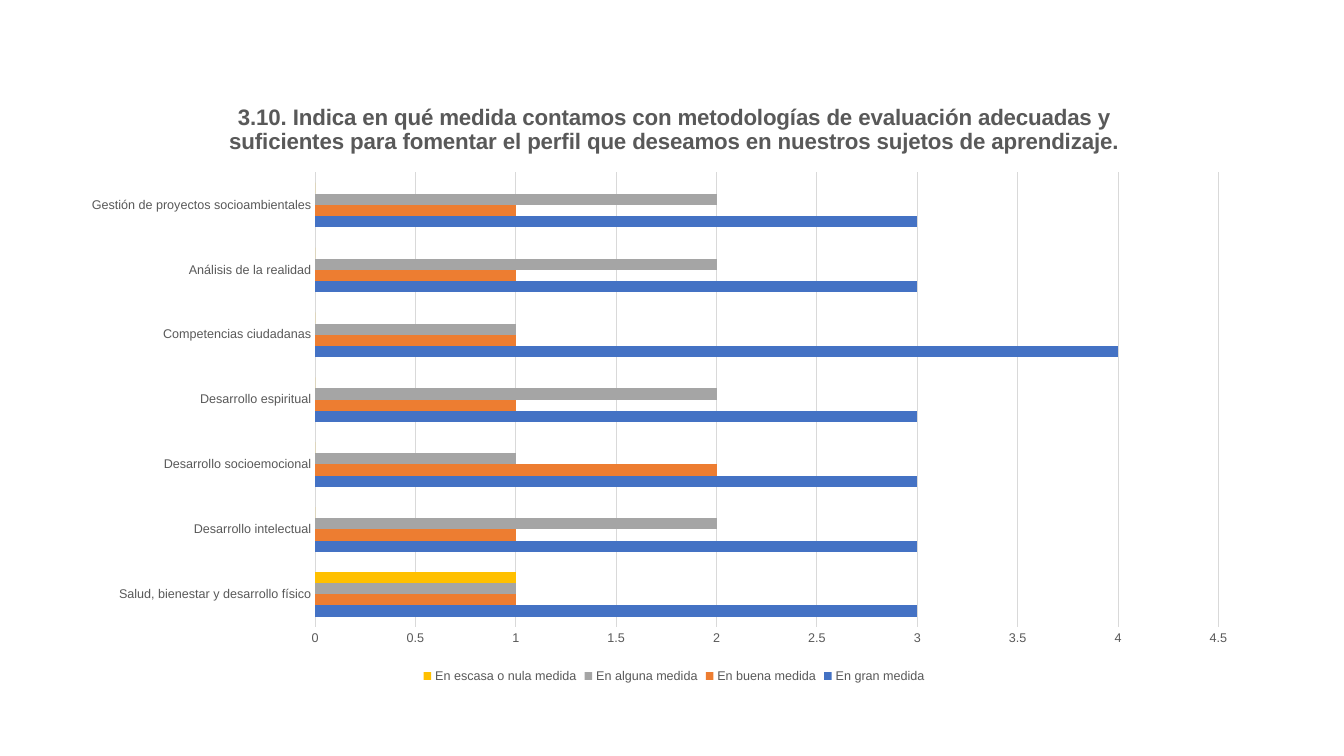
"""Build a slide with a clustered bar chart on evaluation methodologies."""
from lxml import etree
from pptx import Presentation
from pptx.chart.data import CategoryChartData
from pptx.dml.color import RGBColor
from pptx.enum.chart import XL_CHART_TYPE as ChartType
from pptx.enum.chart import XL_LEGEND_POSITION as LegendPosition
from pptx.enum.chart import XL_TICK_MARK as TickMark
from pptx.oxml.ns import qn
from pptx.util import Inches, Pt

GREY, PALE = "595959", "D9D9D9"
TITLE = ("3.10. Indica en qué medida contamos con metodologías de evaluación adecuadas y "
         "suficientes para fomentar el perfil que deseamos en nuestros sujetos de aprendizaje.")
CATEGORIES = [
    "Salud, bienestar y desarrollo físico",
    "Desarrollo intelectual",
    "Desarrollo socioemocional",
    "Desarrollo espiritual",
    "Competencias ciudadanas",
    "Análisis de la realidad",
    "Gestión de proyectos socioambientales",
]
ANSWERS = [
    ("En gran medida", "4472C4", (3, 3, 3, 3, 4, 3, 3)),
    ("En buena medida", "ED7D31", (1, 1, 2, 1, 1, 1, 1)),
    ("En alguna medida", "A5A5A5", (1, 2, 1, 2, 1, 2, 2)),
    ("En escasa o nula medida", "FFC000", (1, 0, 0, 0, 0, 0, 0)),
]
PLOT_AREA = {"x": 0.19, "y": 0.15, "w": 0.78, "h": 0.75}


def paint(color_format, color):
    color_format.rgb = RGBColor.from_string(color)


def format_text(text, size=9, color=GREY, bold=False):
    text.font.name = "Arial"
    text.font.size = Pt(size)
    text.font.bold = bold
    paint(text.font.color, color)


deck = Presentation()
deck.slide_width, deck.slide_height = Inches(13.33), Inches(7.5)
page = deck.slides.add_slide(deck.slide_layouts[6])

data = CategoryChartData(number_format="General")
data.categories = CATEGORIES
for name, color, values in ANSWERS:
    data.add_series(name, values)
chart = page.shapes.add_chart(
    ChartType.BAR_CLUSTERED,
    Inches(0.91), Inches(0.81), Inches(11.52), Inches(6.01), data).chart
format_text(chart, size=10, color="000000")

chart.has_title = True
para = chart.chart_title.text_frame.paragraphs[0]
span = para.add_run()
span.text = TITLE
format_text(para, size=16, bold=True)
format_text(span, size=16, bold=True)
chart.chart_title.include_in_layout = False

chart.has_legend = True
chart.legend.position = LegendPosition.BOTTOM
chart.legend.include_in_layout = False
format_text(chart.legend)

for axis in (chart.category_axis, chart.value_axis):
    axis.major_tick_mark = axis.minor_tick_mark = TickMark.NONE
    format_text(axis.tick_labels)
chart.value_axis.minimum_scale = 0
chart.value_axis.maximum_scale = 4.5
chart.value_axis.major_unit = 0.5
chart.value_axis.format.line.fill.background()
chart.value_axis.has_major_gridlines = True
for line in (chart.category_axis.format.line, chart.value_axis.major_gridlines.format.line):
    paint(line.color, PALE)
    line.width = Pt(0.75)

plot = chart.plots[0]
plot.gap_width = 182
plot.overlap = 0
plot.vary_by_categories = False
for series, (name, color, values) in zip(plot.series, ANSWERS):
    series.format.fill.solid()
    paint(series.format.fill.fore_color, color)

plot_area = chart.element.find(".//" + qn("c:plotArea"))
layout = plot_area.find(qn("c:layout"))
if layout is None:
    layout = etree.Element(qn("c:layout"))
    plot_area.insert(0, layout)
manual = etree.SubElement(layout, qn("c:manualLayout"))
settings = {"layoutTarget": "inner", "xMode": "edge", "yMode": "edge", **PLOT_AREA}
for tag, value in settings.items():
    etree.SubElement(manual, qn("c:" + tag)).set("val", str(value))

deck.save("out.pptx")
